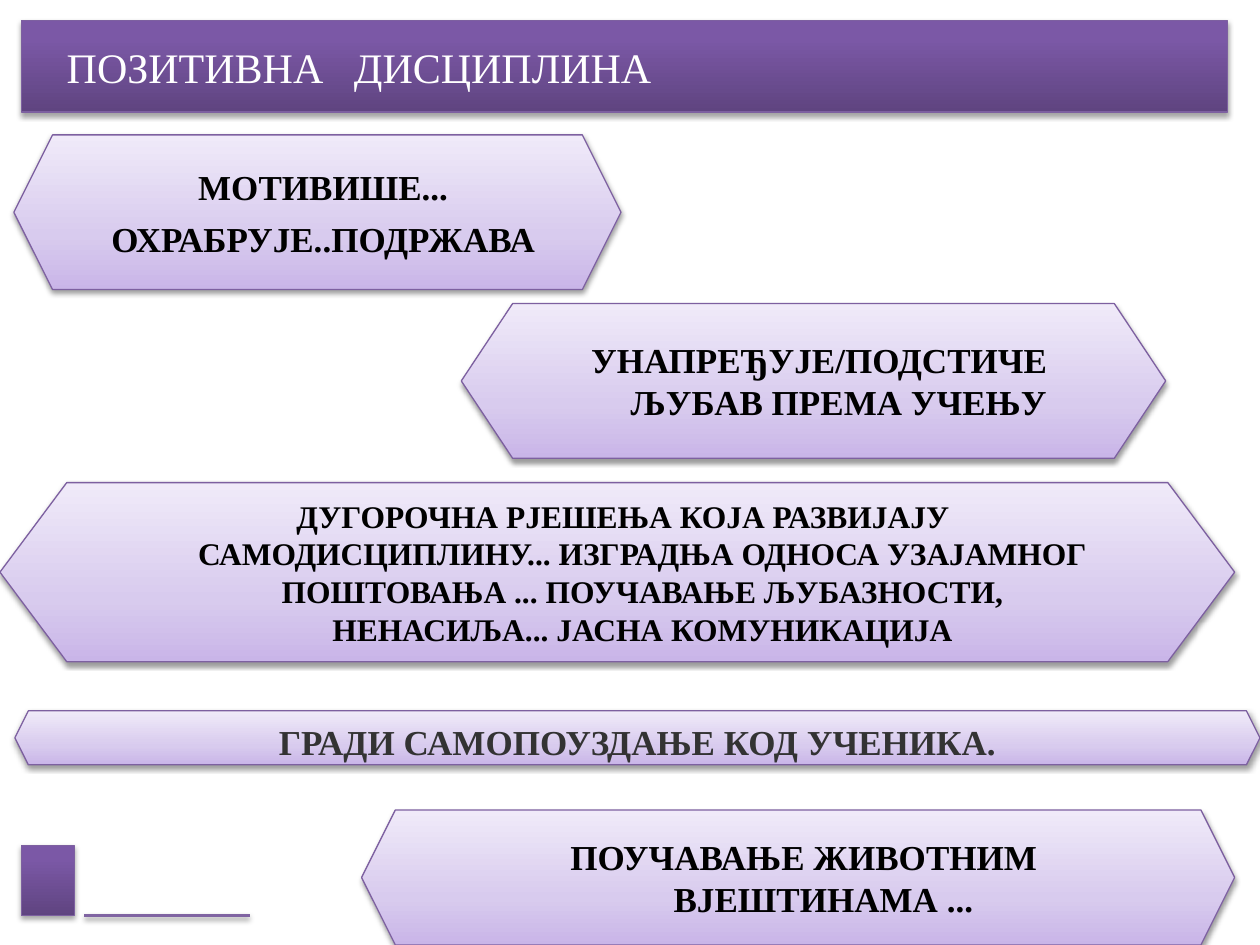
from lxml.etree import SubElement
from pptx import Presentation
from pptx.dml.color import RGBColor
from pptx.enum.shapes import MSO_CONNECTOR as Connector, MSO_SHAPE as Preset
from pptx.enum.text import MSO_ANCHOR as Anchor, MSO_AUTO_SIZE as AutoSize, PP_ALIGN as Align
from pptx.oxml.ns import qn
from pptx.util import Cm, Pt

FONT = "Times New Roman"
EDGE = "7D60A0"
DARK_STOPS = [(0, "5F4480"), (80, "7B58A6"), (100, "7C57A8")]
LIGHT_STOPS = [(0, "C9B5E8"), (35, "D8CBEE"), (100, "F0EAF9")]

HEXAGONS = [
    ((0.28, 2.72, 12.24, 3.12), 0.25, 20, ["МОТИВИШЕ...", "ОХРАБРУЈЕ..ПОДРЖАВА"]),
    ((0, 9.73, 24.89, 3.61), 0.373, 18, [
        "ДУГОРОЧНА РЈЕШЕЊА КОЈА РАЗВИЈАЈУ САМОДИСЦИПЛИНУ... "
        "ИЗГРАДЊА ОДНОСА УЗАЈАМНОГ ПОШТОВАЊА ... ПОУЧАВАЊЕ ЉУБАЗНОСТИ, "
        "НЕНАСИЉА... ЈАСНА КОМУНИКАЦИЈА"]),
    ((9.3, 6.12, 14.2, 3.12), 0.332, 20, ["УНАПРЕЂУЈЕ/ПОДСТИЧЕ ЉУБАВ ПРЕМА УЧЕЊУ"]),
    ((7.29, 16.33, 17.6, 2.72), 0.25, 20, ["ПОУЧАВАЊЕ ЖИВОТНИМ ВЈЕШТИНАМА ..."]),
]


def color(value):
    """Return the colour for a hex string."""
    return RGBColor.from_string(value)


def add_shadow(shape, opacity, distance):
    """Give a shape or connector a soft shadow falling downwards."""
    effects = SubElement(shape._element.spPr, qn("a:effectLst"))
    shadow = SubElement(effects, qn("a:outerShdw"), blurRad=str(Pt(3.1)),
                        dist=str(Pt(distance)), dir="5400000", rotWithShape="0")
    black = SubElement(shadow, qn("a:srgbClr"), val="000000")
    SubElement(black, qn("a:alpha"), val=str(opacity * 1000))


def add_gradient_shape(slide, preset, box, stops, opacity, distance):
    """Add an outlined shape whose gradient runs from bottom to top."""
    shape = slide.shapes.add_shape(preset, *map(Cm, box))
    shape.line.color.rgb = color(EDGE)
    shape.line.width = Pt(0.75)
    properties = shape._element.spPr
    gradient = SubElement(properties, qn("a:gradFill"), rotWithShape="1")
    stop_list = SubElement(gradient, qn("a:gsLst"))
    for position, value in stops:
        stop = SubElement(stop_list, qn("a:gs"), pos=str(position * 1000))
        SubElement(stop, qn("a:srgbClr"), val=value)
    SubElement(gradient, qn("a:lin"), ang="16200000", scaled="0")
    properties.find(qn("a:ln")).addprevious(gradient)
    add_shadow(shape, opacity, distance)
    return shape


def add_run(paragraph, text, size, value, bold=False):
    """Append one formatted run to a paragraph."""
    run = paragraph.add_run()
    run.text = text
    run.font.name = FONT
    run.font.size = Pt(size)
    run.font.bold = bold
    run.font.color.rgb = color(value)


def add_banner(slide, box):
    """Add the dark band and place the slide title over it."""
    left, top, _, _ = box
    add_gradient_shape(slide, Preset.RECTANGLE, box, DARK_STOPS, 35, 1.8)
    title = slide.shapes.title
    slide.shapes._spTree.append(title._element)
    title.left, title.top = Cm(left + 0.66), Cm(top + 0.3)
    title.width, title.height = Cm(15.01), Cm(1.27)
    frame = title.text_frame
    frame.word_wrap = True
    frame.auto_size = AutoSize.SHAPE_TO_FIT_TEXT
    frame.vertical_anchor = Anchor.TOP
    paragraph = frame.paragraphs[0]
    paragraph.alignment = Align.LEFT
    tabs = SubElement(paragraph._p.get_or_add_pPr(), qn("a:tabLst"))
    SubElement(tabs, qn("a:tab"), pos=str(Cm(5.79)), algn="l")
    add_run(paragraph, "ПОЗИТИВНА\tДИСЦИПЛИНА", 24, "FFFFFF")


def add_corner_mark(slide, box):
    """Add the small dark block and the rule beside its foot."""
    left, top, width, height = box
    add_gradient_shape(slide, Preset.RECTANGLE, box, DARK_STOPS, 35, 1.8)
    start, foot = left + width + 0.2, top + height
    rule = slide.shapes.add_connector(
        Connector.STRAIGHT, Cm(start), Cm(foot), Cm(start + 3.33), Cm(foot))
    rule.line.color.rgb = color("8064A2")
    rule.line.width = Pt(2)
    add_shadow(rule, 38, 1.6)


def add_hexagon(slide, box, adjustment, size, lines, value="000000", hanging=True, spacing=None):
    """Add a light hexagon holding centred bold paragraphs."""
    shape = add_gradient_shape(slide, Preset.HEXAGON, box, LIGHT_STOPS, 38, 1.6)
    shape.adjustments[0] = adjustment
    frame = shape.text_frame
    frame.word_wrap = True
    frame.vertical_anchor = Anchor.MIDDLE
    for index, text in enumerate(lines):
        paragraph = frame.add_paragraph() if index else frame.paragraphs[0]
        paragraph.alignment = Align.CENTER
        if hanging:
            properties = paragraph._p.get_or_add_pPr()
            properties.set("marL", str(Cm(1.02)))
            properties.set("indent", str(Cm(-0.79)))
        if index:
            paragraph.space_before = Pt(6)
        if spacing:
            paragraph.line_spacing = spacing
        add_run(paragraph, text, size, value, bold=True)


def main():
    """Build and save the slide."""
    presentation = Presentation()
    presentation.slide_width, presentation.slide_height = Cm(25.4), Cm(19.05)
    slide = presentation.slides.add_slide(presentation.slide_layouts[5])
    add_corner_mark(slide, (0.43, 17.04, 1.07, 1.42))
    add_banner(slide, (0.43, 0.41, 24.31, 1.85))
    for box, adjustment, size, lines in HEXAGONS:
        add_hexagon(slide, box, adjustment, size, lines)
    add_hexagon(slide, (0.3, 14.33, 25.1, 1.09), 0.25, 20,
                ["ГРАДИ САМОПОУЗДАЊЕ КОД УЧЕНИКА."],
                value="333333", hanging=False, spacing=1.15)
    presentation.save("out.pptx")


if __name__ == "__main__":
    main()
